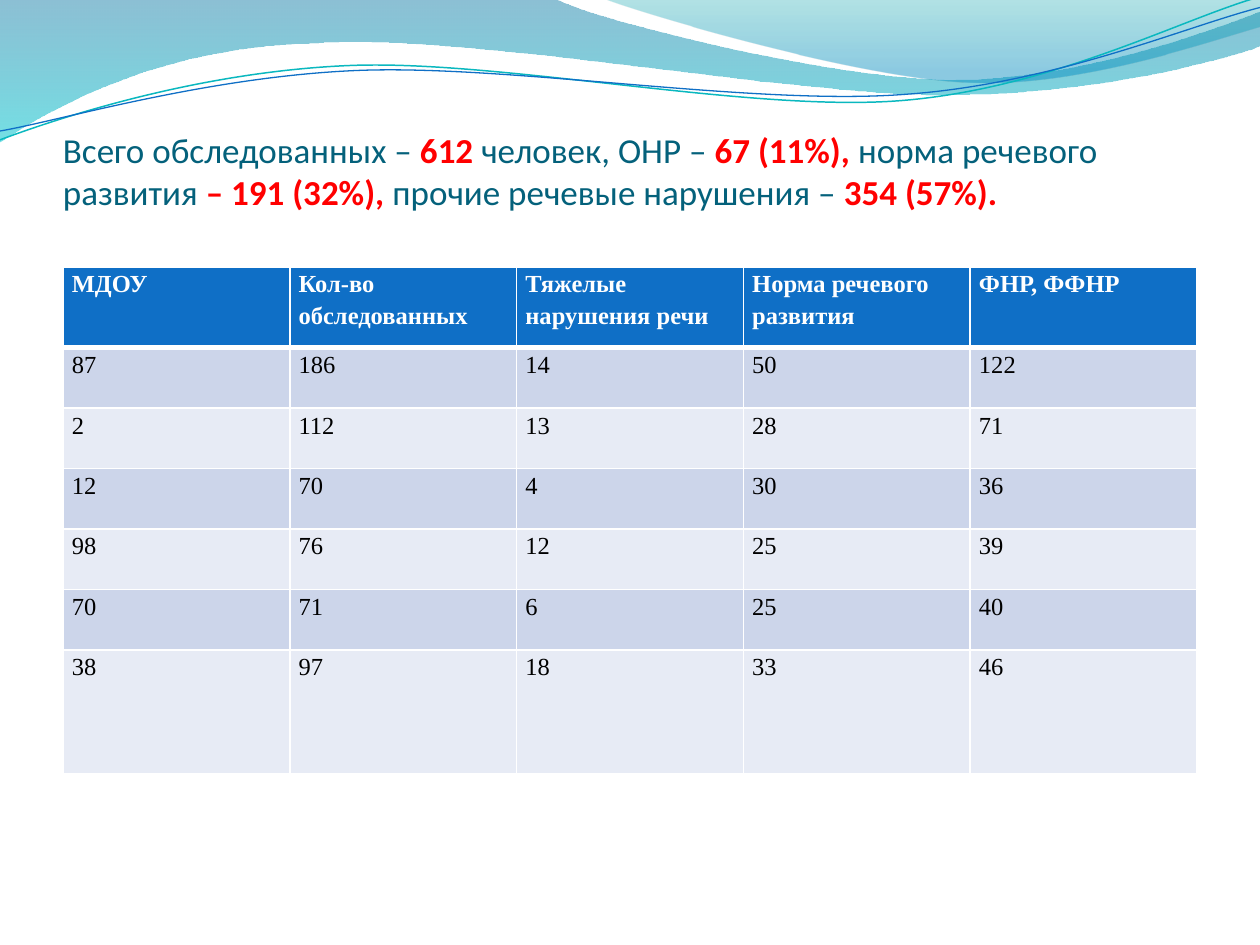
from dataclasses import dataclass
from math import cos, radians, sin

from lxml import etree
from pptx import Presentation
from pptx.dml.color import RGBColor
from pptx.enum.text import MSO_ANCHOR
from pptx.oxml.ns import qn
from pptx.util import Inches, Pt

BOTTOM = MSO_ANCHOR.BOTTOM


@dataclass(frozen=True)
class Theme:
    heading_font: str = "Calibri"
    table_font: str = "Times New Roman"
    heading_size: int = 20
    table_size: int = 14
    heading: str = "04617B"
    accent: str = "FF0000"
    header_fill: str = "0F6FC6"
    header_text: str = "FFFFFF"
    body_text: str = "000000"
    bands: tuple = ("CCD5EA", "E7EBF5")
    border: str = "FFFFFF"
    # Gradient stops: position, colour, opacity in percent
    wide_wave: tuple = ((0, "0074A1", 45), (1, "00C6CF", 55))
    right_wave: tuple = ((0, "00A1A9", 30), (0.8, "008BBF", 45))
    teal_line: str = "0AB8BF"
    blue_line: str = "0F6FC6"


THEME = Theme()

# Each segment holds one point (straight) or three (cubic curve).
WIDE_WAVE = [
    [(0, 0)], [(4.4, -0.01)],
    [(4.76, 0.17), (6.64, 0.63), (7.58, 0.63)],
    [(8.53, 0.63), (9.58, 0.26), (10, 0.09)],
    [(10.01, 0.36)],
    [(9.83, 0.44), (8.7, 0.76), (7.46, 0.75)],
    [(6.22, 0.75), (3.82, 0.28), (2.57, 0.34)],
    [(1.29, 0.36), (0.46, 0.83), (-0.01, 1.13)],
    [(0, 0)],
]
RIGHT_WAVE = [
    [(4.79, -0.01)],
    [(5.09, 0.11), (6.82, 0.62), (7.69, 0.65)],
    [(8.56, 0.69), (9.61, 0.32), (10, 0.21)],
    [(10, 0)],
    [(4.79, -0.01)],
]
TEAL_LINE = [
    [(0, 1.11)],
    [(0.48, 0.93), (1.58, 0.57), (2.77, 0.52)],
    [(3.95, 0.47), (5.93, 0.89), (7.13, 0.8)],
    [(8.33, 0.71), (9.38, 0.15), (9.98, -0.02)],
]
BLUE_LINE = [
    [(0, 1.04)],
    [(0.47, 0.96), (1.64, 0.61), (2.83, 0.56)],
    [(4.03, 0.51), (5.97, 0.84), (7.17, 0.75)],
    [(8.36, 0.67), (9.41, 0.21), (10, 0.06)],
]
LINE_TILT = -2.7

# Text and whether it is emphasised
SUMMARY = [
    ("Всего обследованных –", False),
    (" 612 ", True),
    ("человек, ОНР – ", False),
    ("67 (11%), ", True),
    ("норма речевого развития ", False),
    ("– 191 (32%), ", True),
    ("прочие речевые нарушения – ", False),
    ("354 (57%).", True),
]
RESULTS = [
    ["МДОУ", "Кол-во обследованных", "Тяжелые нарушения речи",
     "Норма речевого развития", "ФНР, ФФНР"],
    [87, 186, 14, 50, 122],
    [2, 112, 13, 28, 71],
    [12, 70, 4, 30, 36],
    [98, 76, 12, 25, 39],
    [70, 71, 6, 25, 40],
    [38, 97, 18, 33, 46],
]
COLUMN_WIDTH = 1.8
ROW_HEIGHTS = [0.64] + [0.48] * 5 + [0.98]


def color(value):
    return RGBColor.from_string(value)


def turn(segments, center, degrees):
    cx, cy = center
    c, s = cos(radians(degrees)), sin(radians(degrees))
    return [[(cx + (x - cx) * c - (y - cy) * s, cy + (x - cx) * s + (y - cy) * c)
             for x, y in segment] for segment in segments]


def add_outline(slide, segments, close):
    """Draw all points as lines, then join each group of three into a curve."""
    start, *rest = [(Inches(x), Inches(y)) for segment in segments for x, y in segment]
    builder = slide.shapes.build_freeform(*start)
    builder.add_line_segments(rest, close=close)
    outline = builder.convert_to_shape()
    outline.shadow.inherit = False
    steps = iter(list(outline.element.spPr.iter(qn("a:lnTo"))))
    for segment in segments[1:]:
        first, *others = [next(steps) for _ in segment]
        if others:
            first.tag = qn("a:cubicBezTo")
        for step in others:
            first.append(step[0])
            step.getparent().remove(step)
    return outline


def add_wave(slide, segments, stops):
    wave = add_outline(slide, segments, close=True)
    wave.line.fill.background()
    wave.fill.gradient()
    wave.fill.gradient_angle = 270
    for stop, (position, value, _) in zip(wave.fill.gradient_stops, stops):
        stop.position = position
        stop.color.rgb = color(value)
    stop_colors = wave.element.spPr.iter(qn("a:srgbClr"))
    for stop_color, (_, _, opacity) in zip(stop_colors, stops):
        etree.SubElement(stop_color, qn("a:alpha"), val=str(opacity * 1000))


def add_wave_line(slide, segments, center, value, width):
    """Draw the curve level, then tilt it about its centre."""
    wave_line = add_outline(slide, turn(segments, center, -LINE_TILT), close=False)
    wave_line.rotation = LINE_TILT
    wave_line.fill.background()
    wave_line.line.color.rgb = color(value)
    wave_line.line.width = Pt(width)


def add_run(paragraph, text, font, size, value, bold):
    run = paragraph.add_run()
    run.text = text
    run.font.name = font
    run.font.size = Pt(size)
    run.font.bold = bold
    run.font.color.rgb = color(value)


def add_summary(slide):
    box = slide.shapes.add_textbox(Inches(0.5), Inches(0.77), Inches(9), Inches(1.25))
    frame = box.text_frame
    frame.word_wrap = True
    frame.vertical_anchor = BOTTOM
    frame.margin_left = frame.margin_right = frame.margin_bottom = 0
    frame.margin_top = Inches(0.05)
    paragraph = frame.paragraphs[0]
    for text, emphasised in SUMMARY:
        add_run(paragraph, text, THEME.heading_font, THEME.heading_size,
                THEME.accent if emphasised else THEME.heading, emphasised)
    paragraph.add_line_break()
    size = str(THEME.heading_size * 100)
    etree.SubElement(paragraph._p[-1], qn("a:rPr"), sz=size)
    etree.SubElement(paragraph._p, qn("a:endParaRPr"), sz=size)


def set_borders(cell, top, bottom):
    properties = cell._tc.get_or_add_tcPr()
    for side, width in (("L", 1), ("R", 1), ("T", top), ("B", bottom)):
        border = etree.SubElement(properties, qn(f"a:ln{side}"), w=str(Pt(width)))
        fill = etree.SubElement(border, qn("a:solidFill"))
        etree.SubElement(fill, qn("a:srgbClr"), val=THEME.border)


def fill_cell(cell, text, row):
    header = row == 0
    set_borders(cell, top=3 if row == 1 else 1, bottom=3 if header else 1)
    cell.fill.solid()
    cell.fill.fore_color.rgb = color(
        THEME.header_fill if header else THEME.bands[(row - 1) % 2])
    cell.margin_left = cell.margin_right = Inches(0.07)
    cell.margin_top = cell.margin_bottom = 0
    paragraph = cell.text_frame.paragraphs[0]
    paragraph.line_spacing = 1.15
    add_run(paragraph, text, THEME.table_font, THEME.table_size,
            THEME.header_text if header else THEME.body_text, header)


def add_results(slide):
    columns = len(RESULTS[0])
    table = slide.shapes.add_table(
        len(RESULTS), columns, Inches(0.5), Inches(2.12),
        Inches(COLUMN_WIDTH * columns), Inches(sum(ROW_HEIGHTS))).table
    for column in table.columns:
        column.width = Inches(COLUMN_WIDTH)
    for row, (height, values) in enumerate(zip(ROW_HEIGHTS, RESULTS)):
        table.rows[row].height = Inches(height)
        for column, value in enumerate(values):
            fill_cell(table.cell(row, column), str(value), row)


def main():
    deck = Presentation()
    deck.slide_width, deck.slide_height = Inches(10), Inches(7.5)
    slide = deck.slides.add_slide(deck.slide_layouts[6])
    add_wave(slide, WIDE_WAVE, THEME.wide_wave)
    add_wave(slide, RIGHT_WAVE, THEME.right_wave)
    add_wave_line(slide, TEAL_LINE, (4.99, 0.58), THEME.teal_line, 0.85)
    add_wave_line(slide, BLUE_LINE, (5, 0.59), THEME.blue_line, 0.75)
    add_summary(slide)
    add_results(slide)
    deck.save("out.pptx")


if __name__ == "__main__":
    main()
